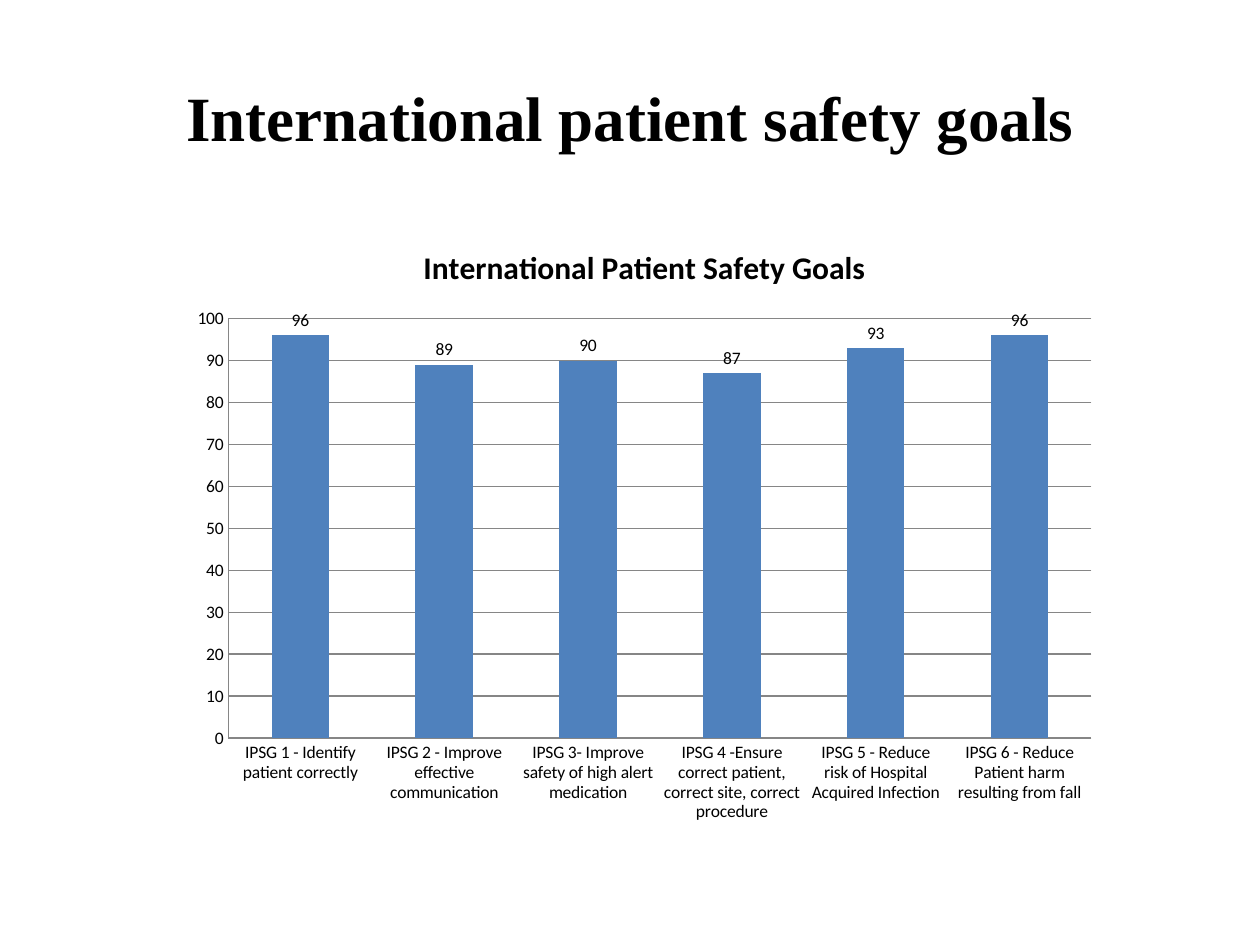
from pptx import Presentation
from pptx.chart.data import CategoryChartData
from pptx.dml.color import RGBColor
from pptx.enum.chart import XL_CHART_TYPE, XL_LABEL_POSITION, XL_TICK_MARK
from pptx.enum.text import MSO_ANCHOR, PP_ALIGN
from pptx.util import Pt

COLORS = {"text": "000000", "bar": "4F81BD", "line": "868686"}
TITLE_FONT = {"name": "Times New Roman", "size": Pt(36), "bold": True}
CHART_FONT = {"name": "Calibri", "size": Pt(10)}
CHART_TITLE_FONT = {"name": "Calibri", "size": Pt(18), "bold": True}
GOALS = {
    "IPSG 1 - Identify patient correctly": 96,
    "IPSG 2 - Improve effective communication": 89,
    "IPSG 3- Improve safety of high alert medication": 90,
    "IPSG 4 -Ensure correct patient, correct site, correct procedure": 87,
    "IPSG 5 - Reduce risk of Hospital Acquired Infection": 93,
    "IPSG 6 - Reduce Patient harm resulting from fall": 96,
}


def set_attrs(obj, values):
    """Set each named attribute on an object."""
    for name, value in values.items():
        setattr(obj, name, value)


def set_font(font, values):
    """Apply font values and the text colour."""
    set_attrs(font, values)
    font.color.rgb = RGBColor.from_string(COLORS["text"])


def set_line(line):
    """Give a chart line its colour and width."""
    line.color.rgb = RGBColor.from_string(COLORS["line"])
    line.width = Pt(0.75)


def add_title(s, box, text):
    """Place and format the slide title in a box."""
    sp = s.shapes.title
    set_attrs(sp, dict(zip(("left", "top", "width", "height"), map(Pt, box))))
    tf = sp.text_frame
    set_attrs(tf, {"word_wrap": True, "vertical_anchor": MSO_ANCHOR.MIDDLE})
    p = tf.paragraphs[0]
    p.alignment = PP_ALIGN.CENTER
    r = p.add_run()
    r.text = text
    set_font(r.font, TITLE_FONT)


def add_goal_chart(s, box, title):
    """Draw the column chart of goal scores in a box."""
    data = CategoryChartData(number_format="0")
    data.categories = list(GOALS)
    data.add_series("Series 1", list(GOALS.values()))
    chart = s.shapes.add_chart(
        XL_CHART_TYPE.COLUMN_CLUSTERED, *map(Pt, box), data
    ).chart
    chart.has_legend = False
    set_font(chart.font, CHART_FONT)

    p = chart.chart_title.text_frame.paragraphs[0]
    r = p.add_run()
    r.text = title
    set_font(r.font, CHART_TITLE_FONT)
    chart.chart_title.include_in_layout = False

    ticks = {"major_tick_mark": XL_TICK_MARK.NONE, "minor_tick_mark": XL_TICK_MARK.NONE}
    for axis in (chart.category_axis, chart.value_axis):
        set_attrs(axis, ticks)
        set_line(axis.format.line)
    set_attrs(chart.value_axis, {
        "minimum_scale": 0, "maximum_scale": 100, "major_unit": 10,
        "has_major_gridlines": True,
    })
    set_line(chart.value_axis.major_gridlines.format.line)
    set_attrs(chart.value_axis.tick_labels,
              {"number_format": "0", "number_format_is_linked": False})

    plot = chart.plots[0]
    set_attrs(plot, {"gap_width": 150, "vary_by_categories": False,
                     "has_data_labels": True})
    set_attrs(plot.data_labels, {
        "show_value": True, "number_format": "0",
        "number_format_is_linked": False,
        "position": XL_LABEL_POSITION.OUTSIDE_END,
    })
    set_font(plot.data_labels.font, CHART_FONT)
    fill = plot.series[0].format.fill
    fill.solid()
    fill.fore_color.rgb = RGBColor.from_string(COLORS["bar"])


def main():
    """Build and save the slide."""
    prs = Presentation()
    set_attrs(prs, {"slide_width": Pt(720), "slide_height": Pt(540)})
    s = prs.slides.add_slide(prs.slide_layouts.get_by_name("Title Only"))
    add_title(s, (36, 21.6, 648, 90), "International patient safety goals")
    add_goal_chart(s, (102.24, 126, 532.08, 350.64),
                   "International Patient Safety Goals")
    prs.save("out.pptx")


if __name__ == "__main__":
    main()
